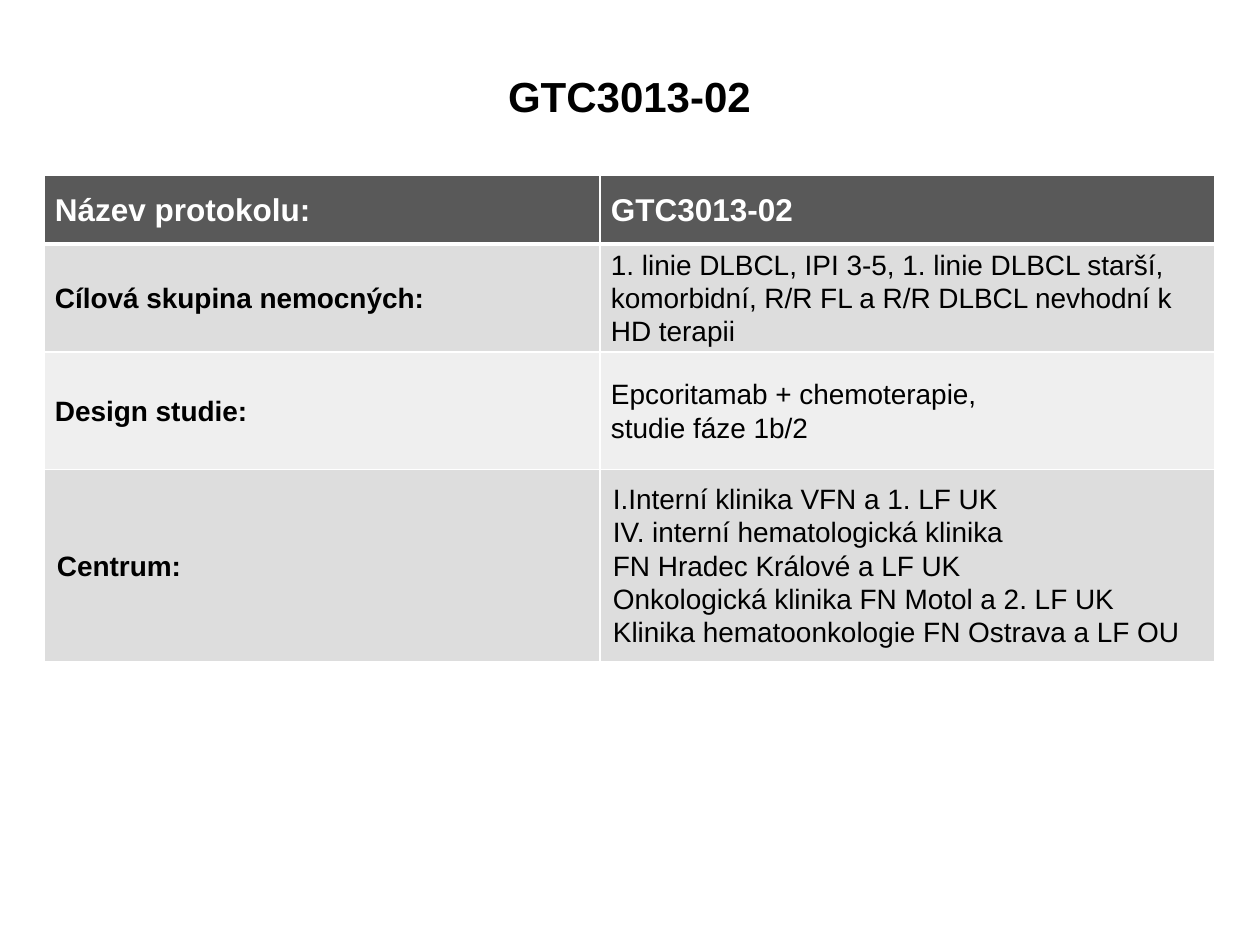
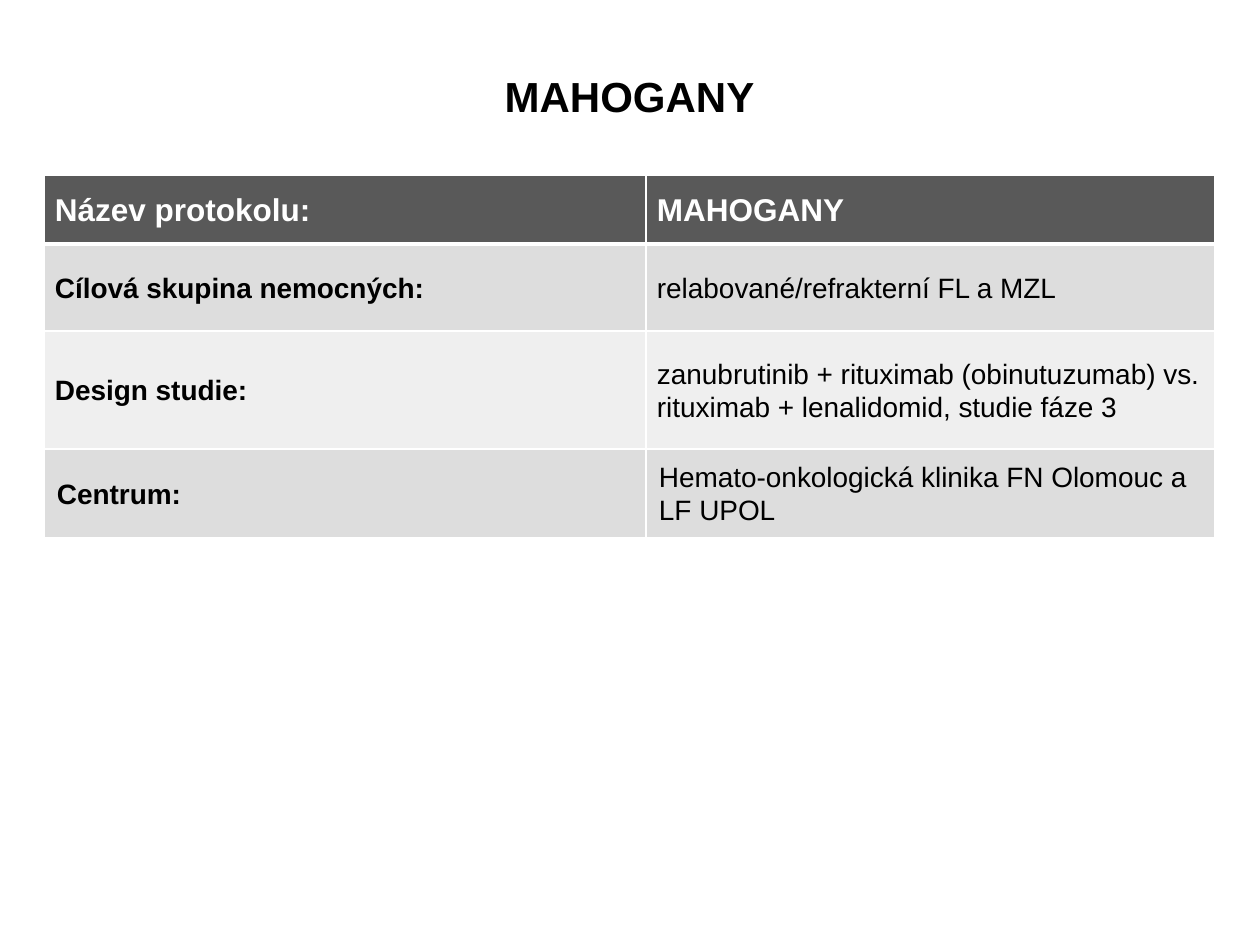
"""Build two slides that sum up clinical study protocols."""
from lxml import etree
from pptx import Presentation
from pptx.dml.color import RGBColor
from pptx.enum.text import MSO_ANCHOR, PP_ALIGN
from pptx.oxml.ns import qn
from pptx.util import Pt

MIDDLE = MSO_ANCHOR.MIDDLE
CENTER = PP_ALIGN.CENTER

LABELS = ["Název protokolu:", "Cílová skupina nemocných:", "Design studie:", "Centrum:"]
STUDIES = [
    {
        "name": "GTC3013-02",
        "cols": (556, 615),
        "facts": [
            ["1. linie DLBCL, IPI 3-5, 1. linie DLBCL starší, komorbidní, "
             "R/R FL a R/R DLBCL nevhodní k HD terapii"],
            ["Epcoritamab + chemoterapie,", "studie fáze 1b/2"],
            ["I.Interní klinika VFN a 1. LF UK",
             "IV. interní hematologická klinika",
             "FN Hradec Králové a LF UK",
             "Onkologická klinika FN Motol a 2. LF UK",
             "Klinika hematoonkologie FN Ostrava a LF OU"],
        ],
    },
    {
        "name": "MAHOGANY",
        "cols": (602, 569),
        "facts": [
            ["relabované/refrakterní FL a MZL"],
            ["zanubrutinib + rituximab (obinutuzumab) vs.",
             "rituximab + lenalidomid, studie fáze 3"],
            ["Hemato-onkologická klinika FN Olomouc a LF UPOL"],
        ],
    },
]

BLACK = RGBColor(0x00, 0x00, 0x00)
WHITE = RGBColor(0xFF, 0xFF, 0xFF)
DARK = RGBColor(0xCC, 0xCC, 0xCC)
LIGHT = RGBColor(0xE7, 0xE7, 0xE7)
FILLS = [BLACK, DARK, LIGHT, DARK]
FONT = "Arial"
ALPHA = 65
ROWS = (69, 87, 118, 89)
TITLE = (94, 37, 1071, 118)
LEFT, TOP = 44, 175
TIGHT = (11, 0, 0, 0)
ROOMY = (13, 6, 13, 6)


def px(n):
    return round(n * 914400 / 126)


def write(frame, lines, size, color, bold, space=None, align=None):
    frame.text = "\n".join(lines)
    for para in frame.paragraphs:
        para.alignment = align
        para.line_spacing = space
        for run in para.runs:
            font = run.font
            font.name, font.size, font.bold = FONT, Pt(size), bold
            font.color.rgb = color


def edge(cell, side, width):
    props = cell._tc.get_or_add_tcPr()
    line = etree.SubElement(props, qn("a:ln" + side), w=str(Pt(width)))
    fill = etree.SubElement(line, qn("a:solidFill"))
    etree.SubElement(fill, qn("a:srgbClr"), val=str(WHITE))


def paint(cell, color):
    cell.fill.solid()
    cell.fill.fore_color.rgb = color
    tint = cell._tc.tcPr.find(qn("a:solidFill"))[0]
    etree.SubElement(tint, qn("a:alpha"), val=str(ALPHA * 1000))


def style(cell, row):
    thick = {(0, "B"), (1, "T")}
    for side in "LRTB":
        edge(cell, side, 3 if (row, side) in thick else 1)
    paint(cell, FILLS[row])
    cell.vertical_anchor = MIDDLE
    pad = [px(n) for n in (ROOMY if row == len(ROWS) - 1 else TIGHT)]
    cell.margin_left, cell.margin_top, cell.margin_right, cell.margin_bottom = pad


def add_title(slide, name):
    frame = slide.shapes.add_textbox(*map(px, TITLE)).text_frame
    frame.word_wrap = True
    frame.vertical_anchor = MIDDLE
    write(frame, [name], 24, BLACK, True, align=CENTER)


def add_grid(slide, study):
    cols = study["cols"]
    box = map(px, (LEFT, TOP, sum(cols), sum(ROWS)))
    table = slide.shapes.add_table(len(ROWS), len(cols), *box).table
    for col, width in zip(table.columns, cols):
        col.width = px(width)
    facts = [[study["name"]], *study["facts"]]
    for i, (label, fact) in enumerate(zip(LABELS, facts)):
        table.rows[i].height = px(ROWS[i])
        head = i == 0
        size, color = (18, WHITE) if head else (16, BLACK)
        for j, lines in enumerate(([label], fact)):
            cell = table.cell(i, j)
            style(cell, i)
            write(cell.text_frame, lines, size, color, head or j == 0, 1.07)


def main():
    deck = Presentation()
    deck.slide_width, deck.slide_height = px(1260), px(945)
    for study in STUDIES:
        slide = deck.slides.add_slide(deck.slide_layouts[6])
        add_title(slide, study["name"])
        add_grid(slide, study)
    deck.save("out.pptx")


if __name__ == "__main__":
    main()
